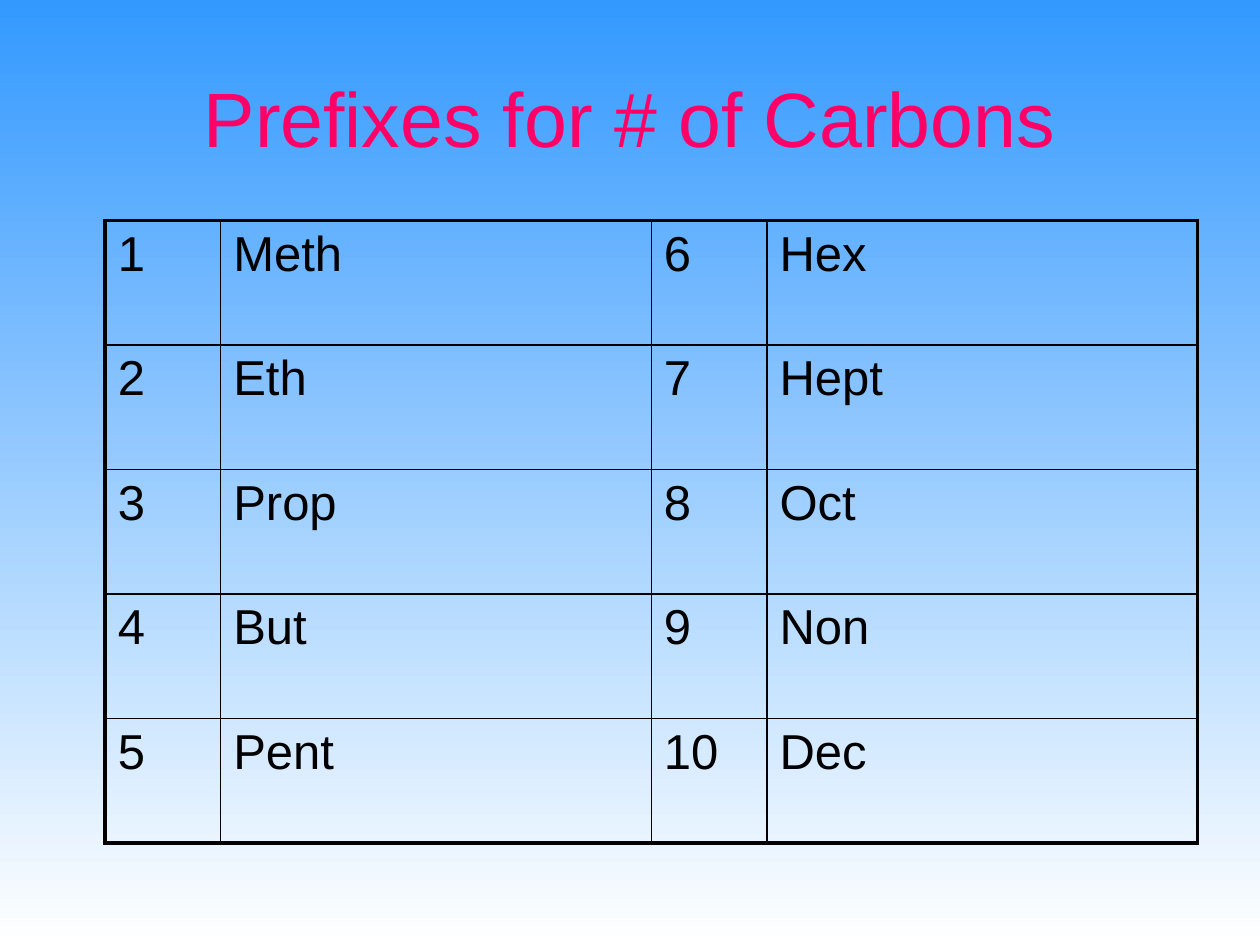
"""Build a slide with a table of the prefixes for one to ten carbons."""
from dataclasses import dataclass

import pptx
import pptx.dml.color
import pptx.enum.text
import pptx.oxml.ns
import pptx.util
from lxml import etree
from pptx.util import Cm


@dataclass(frozen=True)
class Theme:
    font: str = "Arial"
    sky: str = "3399FF"
    white: str = "FFFFFF"
    title: str = "FF0066"
    ink: str = "000000"
    title_size: int = 44
    cell_size: int = 28
    outer_line: float = 2.25
    inner_line: float = 1


THEME = Theme()
PREFIXES = ["Meth", "Eth", "Prop", "But", "Pent", "Hex", "Hept", "Oct", "Non", "Dec"]
ROW_COUNT = 5
COLUMN_WIDTHS = [Cm(2.33), Cm(8.68), Cm(2.33), Cm(8.68)]
ROW_HEIGHT = Cm(2.51)


def add_text(paragraph, text, size, color):
    run = paragraph.add_run()
    run.text = text
    run.font.name = THEME.font
    run.font.size = pptx.util.Pt(size)
    run.font.color.rgb = pptx.dml.color.RGBColor.from_string(color)


def add_border(cell, side, width):
    properties = cell._tc.get_or_add_tcPr()
    line = etree.SubElement(properties, pptx.oxml.ns.qn(f"a:ln{side}"), w=str(pptx.util.Pt(width)))
    fill = etree.SubElement(line, pptx.oxml.ns.qn("a:solidFill"))
    etree.SubElement(fill, pptx.oxml.ns.qn("a:srgbClr"), val=THEME.ink)


presentation = pptx.Presentation()
presentation.slide_width = Cm(25.4)
presentation.slide_height = Cm(19.05)
slide = presentation.slides.add_slide(presentation.slide_layouts[6])

background = slide.background.fill
background.gradient()
background.gradient_angle = 270
for stop, position, color in zip(background.gradient_stops, (0, 1), (THEME.sky, THEME.white)):
    stop.position = position
    stop.color.rgb = pptx.dml.color.RGBColor.from_string(color)

title = slide.shapes.add_textbox(Cm(1.27), Cm(0.76), Cm(22.86), Cm(3.18))
title.text_frame.word_wrap = True
title.text_frame.vertical_anchor = pptx.enum.text.MSO_ANCHOR.MIDDLE
paragraph = title.text_frame.paragraphs[0]
paragraph.alignment = pptx.enum.text.PP_ALIGN.CENTER
add_text(paragraph, "Prefixes for # of Carbons", THEME.title_size, THEME.title)

table = slide.shapes.add_table(
    ROW_COUNT, len(COLUMN_WIDTHS), Cm(2.12), Cm(4.45), sum(COLUMN_WIDTHS), ROW_HEIGHT * ROW_COUNT
).table
table.first_row = False
table.horz_banding = False
for column, width in zip(table.columns, COLUMN_WIDTHS):
    column.width = width

last_row, last_column = ROW_COUNT - 1, len(COLUMN_WIDTHS) - 1
for row_index, row in enumerate(table.rows):
    row.height = ROW_HEIGHT
    left, right = row_index, row_index + ROW_COUNT
    texts = [str(left + 1), PREFIXES[left], str(right + 1), PREFIXES[right]]
    for column_index, text in enumerate(texts):
        cell = table.cell(row_index, column_index)
        outer_sides = {
            "L": column_index == 0,
            "R": column_index == last_column,
            "T": row_index == 0,
            "B": row_index == last_row,
        }
        for side, is_outer in outer_sides.items():
            add_border(cell, side, THEME.outer_line if is_outer else THEME.inner_line)
        cell.fill.background()
        add_text(cell.text_frame.paragraphs[0], text, THEME.cell_size, THEME.ink)

presentation.save("out.pptx")
